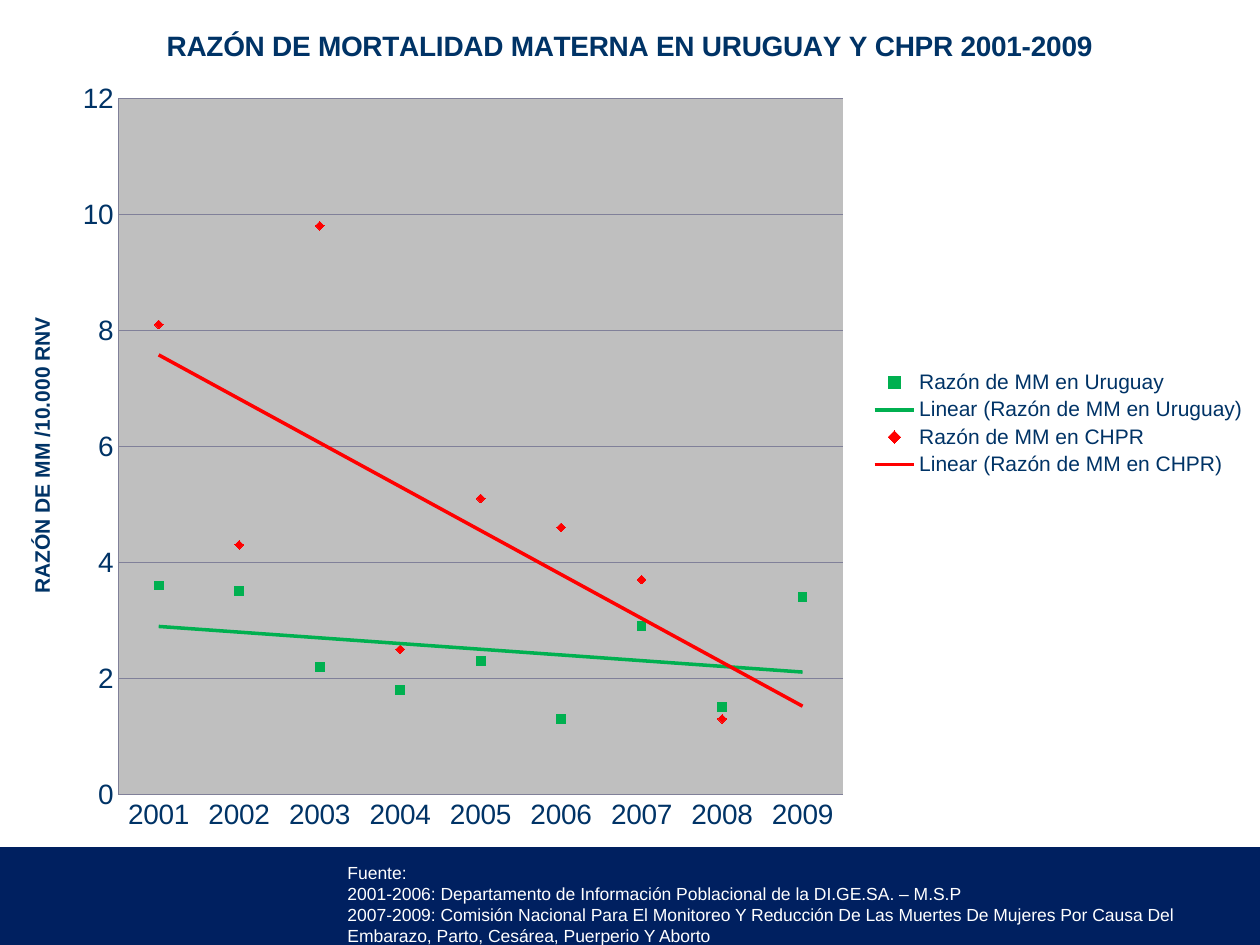
from dataclasses import dataclass

from lxml import etree
from pptx import Presentation
from pptx.chart.data import CategoryChartData
from pptx.dml.color import RGBColor
from pptx.enum.chart import XL_CHART_TYPE, XL_LEGEND_POSITION, XL_MARKER_STYLE, XL_TICK_MARK
from pptx.enum.text import MSO_AUTO_SIZE
from pptx.oxml import parse_xml
from pptx.oxml.ns import nsdecls, qn
from pptx.util import Pt

LINE_MARKERS = XL_CHART_TYPE.LINE_MARKERS
LEGEND_RIGHT = XL_LEGEND_POSITION.RIGHT
SQUARE = XL_MARKER_STYLE.SQUARE
DIAMOND = XL_MARKER_STYLE.DIAMOND
NO_TICK = XL_TICK_MARK.NONE
GROW_SHAPE = MSO_AUTO_SIZE.SHAPE_TO_FIT_TEXT


@dataclass(frozen=True)
class Theme:
    font: str = "Arial"
    background: str = "002060"
    paper: str = "FFFFFF"
    plot: str = "BFBFBF"
    grid: str = "808099"
    ink: str = "003366"
    uruguay: str = "00B050"
    hospital: str = "FF0000"
    title_size: int = 16
    axis_size: int = 16
    label_size: int = 12
    source_size: int = 10


THEME = Theme()

YEARS = [str(year) for year in range(2001, 2010)]
SERIES = [
    ("Razón de MM en Uruguay", [3.6, 3.5, 2.2, 1.8, 2.3, 1.3, 2.9, 1.5, 3.4],
     SQUARE, THEME.uruguay),
    ("Razón de MM en CHPR", [8.1, 4.3, 9.8, 2.5, 5.1, 4.6, 3.7, 1.3, None],
     DIAMOND, THEME.hospital),
]
SOURCES = [
    "Fuente:",
    "2001-2006: Departamento de Información Poblacional de la DI.GE.SA. – M.S.P",
    "2007-2009: Comisión Nacional Para El Monitoreo Y Reducción De Las Muertes De "
    "Mujeres Por Causa Del Embarazo, Parto, Cesárea, Puerperio Y Aborto",
]


def color(value):
    return RGBColor.from_string(value)


def style_font(font, size, value, bold=False):
    font.name = THEME.font
    font.size = Pt(size)
    font.bold = bold
    font.color.rgb = color(value)


def fill_properties(value):
    return parse_xml(
        f'<c:spPr {nsdecls("c", "a")}><a:solidFill><a:srgbClr val="{value}"/></a:solidFill>'
        "<a:ln><a:noFill/></a:ln></c:spPr>"
    )


def set_layout(element, position, **fractions):
    for existing in element.findall(qn("c:layout")):
        element.remove(existing)
    layout = etree.Element(qn("c:layout"))
    manual = etree.SubElement(layout, qn("c:manualLayout"))
    if "w" in fractions:
        etree.SubElement(manual, qn("c:layoutTarget")).set("val", "inner")
    for name in ("x", "y"):
        etree.SubElement(manual, qn(f"c:{name}Mode")).set("val", "edge")
    for name, fraction in fractions.items():
        etree.SubElement(manual, qn(f"c:{name}")).set("val", str(fraction))
    element.insert(position, layout)


def add_title(owner, text, size):
    owner.has_title = True
    title = owner.chart_title if hasattr(owner, "chart_title") else owner.axis_title
    run = title.text_frame.paragraphs[0].add_run()
    run.text = text
    style_font(run.font, size, THEME.ink, bold=True)
    return title


def add_trendline(series, value):
    trendline = parse_xml(
        f'<c:trendline {nsdecls("c", "a")}><c:name>Linear ({series.name})</c:name>'
        f'<c:spPr><a:ln w="{Pt(2)}"><a:solidFill><a:srgbClr val="{value}"/></a:solidFill>'
        '</a:ln></c:spPr><c:trendlineType val="linear"/>'
        '<c:dispRSqr val="0"/><c:dispEq val="0"/></c:trendline>'
    )
    series._element.find(qn("c:cat")).addprevious(trendline)


def style_series(series, symbol, value):
    series.smooth = False
    series.format.line.fill.background()
    marker = series.marker
    marker.style = symbol
    marker.size = 5
    marker.format.fill.solid()
    marker.format.fill.fore_color.rgb = color(value)
    marker.format.line.fill.background()
    add_trendline(series, value)


def style_axis(axis):
    axis.major_tick_mark = NO_TICK
    axis.minor_tick_mark = NO_TICK
    axis.format.line.color.rgb = color(THEME.grid)
    style_font(axis.tick_labels.font, THEME.axis_size, THEME.ink)


def add_mortality_chart(slide, left, top, width, height):
    data = CategoryChartData()
    data.categories = YEARS
    for name, values, _, _ in SERIES:
        data.add_series(name, values)
    chart = slide.shapes.add_chart(
        LINE_MARKERS, Pt(left), Pt(top), Pt(width), Pt(height), data
    ).chart
    style_font(chart.font, THEME.source_size, THEME.ink)
    add_title(chart, "RAZÓN DE MORTALIDAD MATERNA EN URUGUAY Y CHPR 2001-2009",
              THEME.title_size)

    style_axis(chart.category_axis)
    value_axis = chart.value_axis
    style_axis(value_axis)
    value_axis.minimum_scale = 0
    value_axis.maximum_scale = 12
    value_axis.major_unit = 2
    value_axis.has_major_gridlines = True
    value_axis.major_gridlines.format.line.color.rgb = color(THEME.grid)
    axis_title = add_title(value_axis, "RAZÓN DE MM /10.000 RNV", THEME.label_size)
    set_layout(axis_title._element, 1, x=0.02, y=0.37)

    chart.has_legend = True
    chart.legend.position = LEGEND_RIGHT
    chart.legend.include_in_layout = False
    style_font(chart.legend.font, THEME.label_size, THEME.ink)

    plot = chart.plots[0]
    plot.vary_by_categories = False
    for series, (_, _, symbol, value) in zip(plot.series, SERIES):
        style_series(series, symbol, value)

    chart_space = chart._chartSpace
    chart_element = chart_space.find(qn("c:chart"))
    chart_element.addnext(fill_properties(THEME.paper))
    plot_area = chart_element.find(qn("c:plotArea"))
    set_layout(plot_area, 0, x=0.094, y=0.116, w=0.575, h=0.822)
    plot_area.append(fill_properties(THEME.plot))


def add_sources(slide, left, top, width, height):
    text_box = slide.shapes.add_textbox(Pt(left), Pt(top), Pt(width), Pt(height))
    text_frame = text_box.text_frame
    text_frame.word_wrap = True
    text_frame.auto_size = GROW_SHAPE
    for index, text in enumerate(SOURCES):
        paragraph = text_frame.add_paragraph() if index else text_frame.paragraphs[0]
        run = paragraph.add_run()
        run.text = text
        style_font(run.font, THEME.source_size, THEME.paper)


def main():
    presentation = Presentation()
    presentation.slide_width = Pt(720)
    presentation.slide_height = Pt(540)
    slide = presentation.slides.add_slide(presentation.slide_layouts[6])
    slide.background.fill.solid()
    slide.background.fill.fore_color.rgb = color(THEME.background)
    add_sources(slide, 191.5, 489, 534, 55.5)
    add_mortality_chart(slide, 0, 0, 720, 484)
    presentation.save("out.pptx")


if __name__ == "__main__":
    main()
